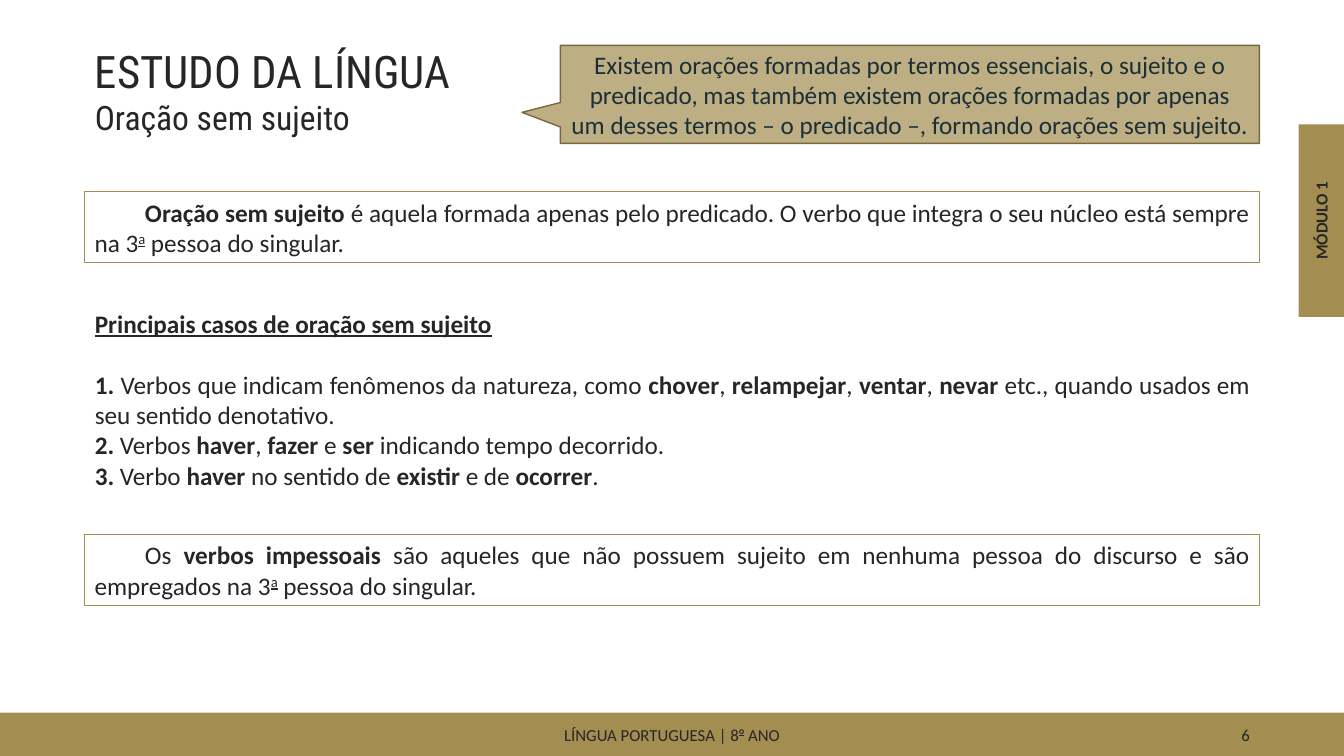
from lxml import etree
from pptx import Presentation
from pptx.dml.color import RGBColor
from pptx.enum import shapes, text
from pptx.oxml.ns import qn
from pptx.util import Pt

GOLD = RGBColor(0xA3, 0x8D, 0x51)
DARK_GOLD = RGBColor(0x79, 0x68, 0x3C)
INK = RGBColor(0x26, 0x26, 0x26)
NAVY = RGBColor(0x1B, 0x2F, 0x36)

BODY_FONT, TITLE_FONT = "Calibri", "Roboto Condensed"
LEFT, WIDTH = 60.5, 839.5
SLIDE_W, SLIDE_H = 960, 540
BAR = 32.4  # thickness of the footer bar and of the module tab
FOOTER_TOP, FOOTER_H = 511.2, 27.4

ALIGN, ANCHOR = text.PP_ALIGN, text.MSO_ANCHOR
BOLD = {"bold": True}
HEADING = {"bold": True, "underline": True}
RAISED = {"underline": True, "baseline": 30}
RAISED_BOLD = {"bold": True, "underline": True, "baseline": 45}

# Each paragraph is a list of runs: plain text or (text, format)
DEFINITION = [("Oração sem sujeito ", BOLD),
              "é aquela formada apenas pelo predicado. O verbo que integra o seu "
              "núcleo está sempre na 3", ("a", RAISED), " pessoa do singular."]
IMPERSONAL = ["Os ", ("verbos impessoais ", BOLD),
              "são aqueles que não possuem sujeito em nenhuma pessoa do discurso e "
              "são empregados na 3", ("a", RAISED), " pessoa do singular."]
CASES_HEADING = [("Principais casos de oração sem sujeito", HEADING)]
CASES = [
    [("1. ", BOLD), "Verbos que indicam fenômenos da natureza, como ",
     ("chover", BOLD), ", ", ("relampejar", BOLD), ", ", ("ventar", BOLD), ", ",
     ("nevar", BOLD), " etc., quando usados em seu sentido denotativo."],
    [("2.", BOLD), " Verbos ", ("haver", BOLD), ", ", ("fazer ", BOLD), "e ",
     ("ser ", BOLD), "indicando tempo decorrido."],
    [("3.", BOLD), " Verbo ", ("haver", BOLD), " no sentido de ",
     ("existir", BOLD), " e de ", ("ocorrer", BOLD), "."],
]
CALLOUT = ["Existem orações formadas por termos essenciais, o sujeito e o predicado, "
           "mas também existem orações formadas por apenas um desses termos – o "
           "predicado –, formando orações sem sujeito."]
FOOTER = ["LÍNGUA PORTUGUESA | 8", ("o", RAISED_BOLD), " ANO"]


def set_attrs(obj, values):
    for name, value in values.items():
        setattr(obj, name, value)


def place(sp, box):
    set_attrs(sp, dict(zip(("left", "top", "width", "height"), map(Pt, box))))


def setup_frame(sp, anchor):
    tf = sp.text_frame
    set_attrs(tf, {"word_wrap": True, "vertical_anchor": anchor,
                   "auto_size": text.MSO_AUTO_SIZE.NONE})
    return tf


def write(p, runs, size, align, font=BODY_FONT, color=INK, after=0, indent=0):
    set_attrs(p, {"alignment": align, "space_before": Pt(0), "space_after": Pt(after)})
    pPr = p._p.get_or_add_pPr()
    pPr.set("marL", "0")
    pPr.set("indent", str(Pt(indent)))
    etree.SubElement(pPr, qn("a:buNone"))
    for item in runs:
        content, style = (item, {}) if isinstance(item, str) else item
        r = p.add_run()
        r.text = content
        set_attrs(r.font, {"name": font, "size": Pt(size),
                           "bold": style.get("bold", False),
                           "underline": style.get("underline", False)})
        r.font.color.rgb = color
        if "baseline" in style:
            r._r.get_or_add_rPr().set("baseline", str(style["baseline"] * 1000))


def add_box(slide, box, fill=None, line=None, line_width=0.75,
            kind=shapes.MSO_SHAPE.RECTANGLE):
    sp = slide.shapes.add_shape(kind, *map(Pt, box))
    sp.shadow.inherit = False
    if fill is None:
        sp.fill.background()
    else:
        sp.fill.solid()
        sp.fill.fore_color.rgb = fill
    if line is None:
        sp.line.fill.background()
    else:
        sp.line.color.rgb = line
        sp.line.width = Pt(line_width)
    return sp


def add_label(slide, box, runs, align, after=0, anchor=ANCHOR.MIDDLE):
    sp = slide.shapes.add_textbox(*map(Pt, box))
    write(setup_frame(sp, anchor).paragraphs[0], runs, 12, align, after=after)
    return sp


def add_framed_text(slide, top, runs):
    sp = add_box(slide, (LEFT, top, WIDTH, 51), line=GOLD)
    write(setup_frame(sp, ANCHOR.MIDDLE).paragraphs[0], runs, 18, ALIGN.JUSTIFY,
          indent=36)


def add_callout(slide):
    sp = add_box(slide, (400.3, 32.4, 499.2, 70), GOLD, DARK_GOLD, 1,
                 shapes.MSO_SHAPE.RECTANGULAR_CALLOUT)
    sp.adjustments[0], sp.adjustments[1] = -0.555, 0.184
    fill_color = sp._element.spPr.find(qn("a:solidFill"))[0]
    etree.SubElement(fill_color, qn("a:alpha")).set("val", "70000")
    write(setup_frame(sp, ANCHOR.MIDDLE).paragraphs[0], CALLOUT, 18, ALIGN.CENTER,
          color=NAVY)


def fill_title(sp):
    place(sp, (LEFT, 27.4, 434, 75))
    tf = setup_frame(sp, ANCHOR.TOP)
    write(tf.paragraphs[0], ["ESTUDO DA LÍNGUA"], 32, ALIGN.LEFT, TITLE_FONT)
    write(tf.add_paragraph(), ["Oração sem sujeito"], 24, ALIGN.LEFT, TITLE_FONT)


def fill_cases(sp):
    place(sp, (LEFT, 216, WIDTH, 138.2))
    tf = setup_frame(sp, ANCHOR.MIDDLE)
    write(tf.paragraphs[0], CASES_HEADING, 18, ALIGN.JUSTIFY, after=22)
    for case in CASES:
        write(tf.add_paragraph(), case, 18, ALIGN.JUSTIFY)


def main():
    prs = Presentation()
    prs.slide_width, prs.slide_height = Pt(SLIDE_W), Pt(SLIDE_H)
    slide = prs.slides.add_slide(prs.slide_layouts[1])

    # Title and list of cases
    fill_title(slide.shapes.title)
    fill_cases(slide.placeholders[1])

    # Footer bar
    add_box(slide, (0, 509, SLIDE_W, BAR), GOLD)
    add_label(slide, (318, FOOTER_TOP, 324, FOOTER_H), FOOTER, ALIGN.CENTER, after=6)
    add_label(slide, (678, FOOTER_TOP, 222, FOOTER_H), ["6"], ALIGN.RIGHT, after=6)

    # Module tab
    add_box(slide, (SLIDE_W - BAR, 88.8, BAR, 137.5), GOLD)
    module = add_label(slide, (875, 146.8, 137.5, 21.8), [("MÓDULO 1", BOLD)],
                       ALIGN.CENTER, anchor=ANCHOR.TOP)
    module.rotation = 270

    # Definitions and callout
    add_framed_text(slide, 136.8, DEFINITION)
    add_framed_text(slide, 381.6, IMPERSONAL)
    add_callout(slide)

    prs.save("out.pptx")


if __name__ == "__main__":
    main()
